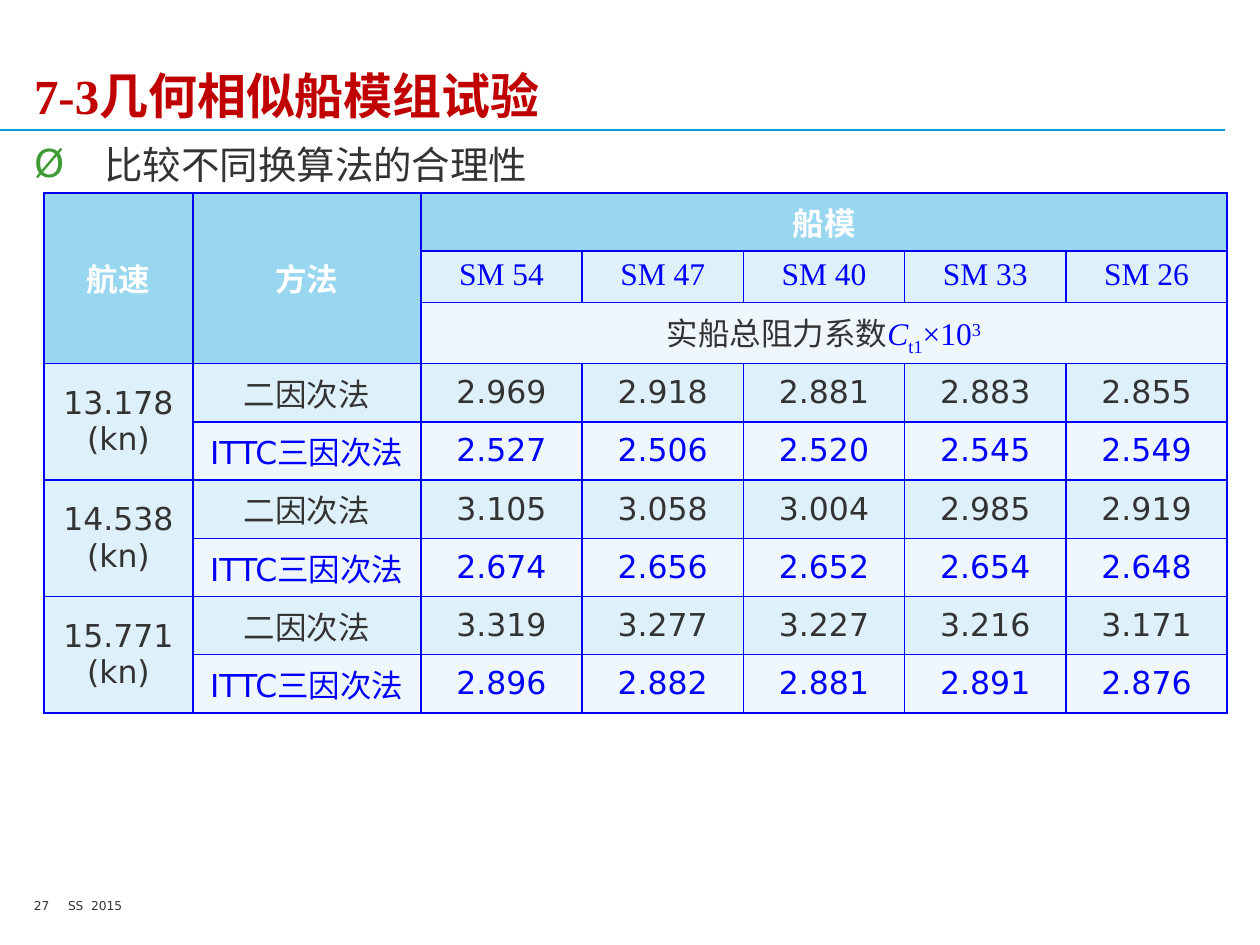
from lxml.etree import SubElement
from pptx import Presentation
from pptx.dml.color import RGBColor
from pptx.enum.shapes import MSO_CONNECTOR
from pptx.enum.text import MSO_ANCHOR, MSO_AUTO_SIZE, PP_ALIGN
from pptx.oxml.ns import qn
from pptx.util import Inches, Pt

SANS, SERIF = "DejaVu Sans", "Times New Roman"
BLUE, GREY, WHITE = "0000FF", "333333", "FFFFFF"
HEADER, PALE, PALEST = "99D6F0", "DEF0F9", "EFF7FC"
paint = RGBColor.from_string


def add_run(paragraph, text, size, color, face=SANS, bold=False, italic=False, baseline=0):
    run = paragraph.add_run()
    run.text = text
    run.font.name = face
    run.font.size = Pt(size)
    run.font.bold = bold
    run.font.italic = italic
    run.font.color.rgb = paint(color)
    if baseline:
        run._r.get_or_add_rPr().set("baseline", str(baseline * 1000))


def set_frame(shape, left, top, width, height, anchor=MSO_ANCHOR.TOP, wrap=True):
    shape.left, shape.top = Inches(left), Inches(top)
    shape.width, shape.height = Inches(width), Inches(height)
    frame = shape.text_frame
    frame.margin_left = frame.margin_right = frame.margin_top = frame.margin_bottom = 0
    frame.auto_size = MSO_AUTO_SIZE.NONE
    frame.vertical_anchor = anchor
    frame.word_wrap = wrap
    frame.paragraphs[0].alignment = PP_ALIGN.LEFT
    return frame.paragraphs[0]


deck = Presentation()
deck.slide_width, deck.slide_height = Inches(10), Inches(7.5)
slide = deck.slides.add_slide(deck.slide_layouts[1])
shapes = slide.shapes
margin, right_edge = 0.27, 9.72
content_width = right_edge - margin

rule = shapes.add_connector(
    MSO_CONNECTOR.STRAIGHT, 0, Inches(1.03), Inches(right_edge), Inches(1.03))
rule.line.color.rgb = paint("009FDA")
rule.line.width = Pt(1)
SubElement(rule._element.spPr, qn("a:effectLst"))

heading = set_frame(shapes.title, margin, 0.26, content_width, 0.73, MSO_ANCHOR.BOTTOM)
add_run(heading, "7-3几何相似船模组试验", 28, "C00000", SERIF, bold=True)

topic_area = slide.placeholders[1]
topic_area.fill.solid()
topic_area.fill.fore_color.rgb = paint(WHITE)
topic = set_frame(topic_area, margin, 1.07, content_width, 0.36)
topic.line_spacing = 1.14
topic.space_before = Pt(0)
topic_format = topic._p.get_or_add_pPr()
topic_format.set("marL", str(Inches(0.56)))
topic_format.set("indent", str(-Inches(0.56)))
bullet_color = SubElement(topic_format, qn("a:buClr"))
SubElement(bullet_color, qn("a:srgbClr"), val="3F9C35")
SubElement(topic_format, qn("a:buFont"), typeface=SANS)
SubElement(topic_format, qn("a:buChar"), char="Ø")
add_run(topic, "比较不同换算法的合理性", 22, GREY, SERIF)

for text, left, width, height, wrap in [
    ("27", margin, 0.26, 0.2, True),
    ("SS\u00a0 2015".replace("\u00a0", " "), 2 * margin, 0.46, 0.12, False),
]:
    footer = set_frame(shapes.add_textbox(0, 0, 0, 0), left, 7.13, width, height, wrap=wrap)
    add_run(footer, text, 7, GREY)

models = ["SM 54", "SM 47", "SM 40", "SM 33", "SM 26"]
methods = [("二因次法", GREY, PALE), ("ITTC三因次法", BLUE, PALEST)]
results = {
    "13.178": [["2.969", "2.918", "2.881", "2.883", "2.855"],
               ["2.527", "2.506", "2.520", "2.545", "2.549"]],
    "14.538": [["3.105", "3.058", "3.004", "2.985", "2.919"],
               ["2.674", "2.656", "2.652", "2.654", "2.648"]],
    "15.771": [["3.319", "3.277", "3.227", "3.216", "3.171"],
               ["2.896", "2.882", "2.881", "2.891", "2.876"]],
}
column_widths = [1.18, 1.81] + [1.28] * len(models)
row_height, row_count = 0.41, 3 + 2 * len(results)
coefficients = shapes.add_table(
    row_count, len(column_widths), Inches(0.35), Inches(1.53),
    Inches(sum(column_widths)), Inches(row_height * row_count)).table
coefficients.first_row = coefficients.horz_banding = False
for column, width in zip(coefficients.columns, column_widths):
    column.width = Inches(width)
for row in coefficients.rows:
    row.height = Inches(row_height)

for r in range(row_count):
    for c in range(len(column_widths)):
        cell = coefficients.cell(r, c)
        cell.vertical_anchor = MSO_ANCHOR.TOP if r == 1 and c > 1 else MSO_ANCHOR.MIDDLE
        cell.text_frame.paragraphs[0].alignment = PP_ALIGN.CENTER
        cell_format = cell._tc.get_or_add_tcPr()
        for side in ("a:lnL", "a:lnR", "a:lnT", "a:lnB"):
            border = SubElement(cell_format, qn(side), w=str(Pt(1)))
            SubElement(SubElement(border, qn("a:solidFill")), qn("a:srgbClr"), val=BLUE)
        is_header = r == 0 or (r < 3 and c < 2)
        is_pale = r % 2 == 1 or c == 0
        cell.fill.solid()
        cell.fill.fore_color.rgb = paint(HEADER if is_header else PALE if is_pale else PALEST)

for c, (label, last_row, last_column) in enumerate([("航速", 2, 0), ("方法", 2, 1), ("船模", 0, 6)]):
    cell = coefficients.cell(0, c)
    cell.merge(coefficients.cell(last_row, last_column))
    add_run(cell.text_frame.paragraphs[0], label, 18, WHITE, bold=True)

for c, model in enumerate(models, 2):
    add_run(coefficients.cell(1, c).text_frame.paragraphs[0], model, 18, BLUE, SERIF)

coefficients.cell(2, 2).merge(coefficients.cell(2, 6))
quantity = coefficients.cell(2, 2).text_frame.paragraphs[0]
add_run(quantity, "实船总阻力系数", 18, GREY)
add_run(quantity, "C", 18, BLUE, SERIF, italic=True)
for text, baseline in [("t1", -25), ("×10", 0), ("3", 30)]:
    add_run(quantity, text, 18, BLUE, SERIF, baseline=baseline)

for block, (speed, series) in enumerate(results.items()):
    top_row = 3 + 2 * block
    speed_cell = coefficients.cell(top_row, 0)
    speed_cell.merge(coefficients.cell(top_row + 1, 0))
    add_run(speed_cell.text_frame.paragraphs[0], speed, 18, GREY)
    unit = speed_cell.text_frame.add_paragraph()
    unit.alignment = PP_ALIGN.CENTER
    add_run(unit, "(kn)", 18, GREY)
    for r, ((method, color, _), values) in enumerate(zip(methods, series), top_row):
        for c, text in enumerate([method, *values], 1):
            add_run(coefficients.cell(r, c).text_frame.paragraphs[0], text, 18, color)

deck.save("out.pptx")
